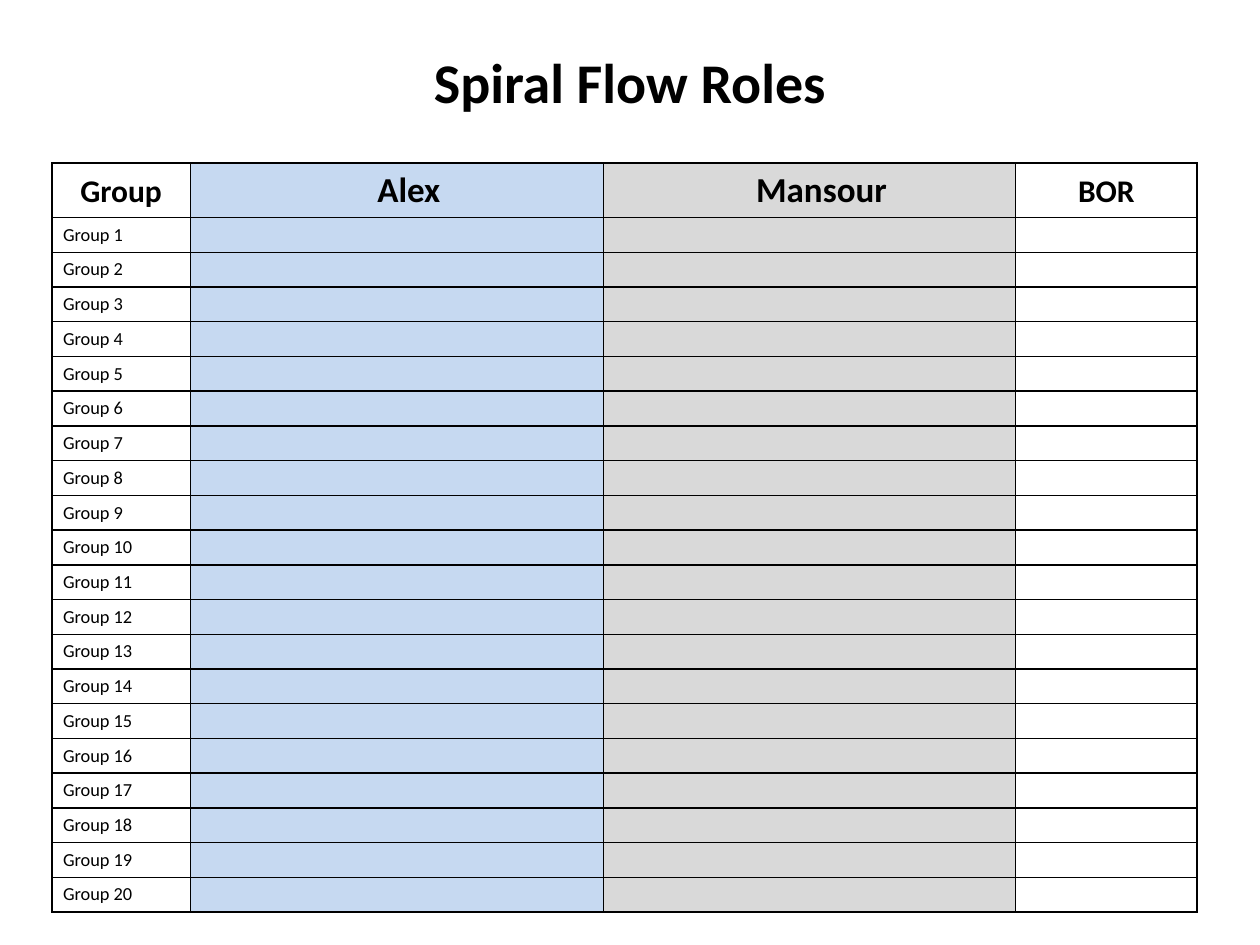
import dataclasses
import typing

import lxml.etree
import pptx
import pptx.dml.color
import pptx.enum.text
import pptx.oxml.ns
import pptx.table
import pptx.util

Pt = pptx.util.Pt
RGB = pptx.dml.color.RGBColor
ALIGN = pptx.enum.text.PP_ALIGN
ANCHOR = pptx.enum.text.MSO_ANCHOR
qn = pptx.oxml.ns.qn


@dataclasses.dataclass(frozen=True)
class Theme:
    font: str = "Calibri"
    ink: str = "000000"
    white: str = "FFFFFF"
    blue: str = "C6D9F1"
    grey: str = "D9D9D9"
    title_size: float = 32
    name_size: float = 20
    header_size: float = 18
    body_size: float = 10.5
    border: float = 1


@dataclasses.dataclass(frozen=True)
class Column:
    header: str
    width: float
    fill: str
    size: float
    indent: float = 0


THEME = Theme()
COLUMNS = (
    Column("Group", 79.2, THEME.white, THEME.header_size),
    Column("Alex", 236.2, THEME.blue, THEME.name_size, 13.5),
    Column("Mansour", 235.4, THEME.grey, THEME.name_size, 13.5),
    Column("BOR", 103.7, THEME.white, THEME.header_size),
)
GROUP_COUNT = 20
HEADER_HEIGHT, ROW_HEIGHT = 29.5, 19.87
TABLE_LEFT, TABLE_TOP = 29.6, 93.1


def set_attrs(target: typing.Any, values: dict[str, typing.Any]) -> None:
    for name, value in values.items():
        setattr(target, name, value)


def write(p: typing.Any, text: str, size: float, bold: bool, align: ALIGN) -> None:
    p.alignment = align
    r = p.add_run()
    r.text = text
    set_attrs(r.font, {"name": THEME.font, "size": Pt(size), "bold": bold})
    r.font.color.rgb = RGB.from_string(THEME.ink)


def add_borders(cell: pptx.table._Cell) -> None:
    """Rule all four sides; call before the fill is set, as the schema orders them."""
    tc_pr = cell._tc.get_or_add_tcPr()
    for side in ("a:lnL", "a:lnR", "a:lnT", "a:lnB"):
        ln = lxml.etree.SubElement(tc_pr, qn(side), w=str(Pt(THEME.border)))
        fill = lxml.etree.SubElement(ln, qn("a:solidFill"))
        lxml.etree.SubElement(fill, qn("a:srgbClr"), val=THEME.ink)


def format_cell(cell: pptx.table._Cell, fill: str) -> None:
    add_borders(cell)
    cell.fill.solid()
    cell.fill.fore_color.rgb = RGB.from_string(fill)
    set_attrs(cell, {
        "vertical_anchor": ANCHOR.BOTTOM,
        "margin_left": Pt(6.5), "margin_right": Pt(6.5),
        "margin_top": Pt(3.6), "margin_bottom": Pt(3.6),
    })


def add_title(s: typing.Any, text: str) -> None:
    sp = s.shapes.title
    set_attrs(sp, {"left": Pt(0), "top": Pt(23.8), "width": Pt(720), "height": Pt(46)})
    tf = sp.text_frame
    set_attrs(tf, {
        "word_wrap": True,
        "vertical_anchor": ANCHOR.TOP,
        "auto_size": pptx.enum.text.MSO_AUTO_SIZE.SHAPE_TO_FIT_TEXT,
    })
    write(tf.paragraphs[0], text, THEME.title_size, True, ALIGN.CENTER)


def add_roles_table(s: typing.Any) -> None:
    heights = [HEADER_HEIGHT] + [ROW_HEIGHT] * GROUP_COUNT
    table = s.shapes.add_table(
        len(heights), len(COLUMNS), Pt(TABLE_LEFT), Pt(TABLE_TOP),
        Pt(sum(c.width for c in COLUMNS)), Pt(sum(heights)),
    ).table
    table.horz_banding = False
    for row, height in zip(table.rows, heights):
        row.height = Pt(height)
    for j, column in enumerate(COLUMNS):
        table.columns[j].width = Pt(column.width)
        for i in range(len(heights)):
            cell = table.cell(i, j)
            format_cell(cell, column.fill)
            p = cell.text_frame.paragraphs[0]
            if i == 0:
                write(p, column.header, column.size, True, ALIGN.CENTER)
                if column.indent:
                    p._p.get_or_add_pPr().set("marL", str(Pt(column.indent)))
            elif j == 0:
                write(p, f"Group {i}", THEME.body_size, False, ALIGN.LEFT)
            else:
                # An empty cell takes its line height from the end-of-paragraph size.
                end = p._p.get_or_add_endParaRPr()
                end.set("sz", str(int(THEME.body_size * 100)))


def main() -> None:
    prs = pptx.Presentation()
    set_attrs(prs, {"slide_width": Pt(720), "slide_height": Pt(540)})
    s = prs.slides.add_slide(prs.slide_layouts.get_by_name("Title Only"))
    add_title(s, "Spiral Flow Roles")
    add_roles_table(s)
    prs.save("out.pptx")


if __name__ == "__main__":
    main()
